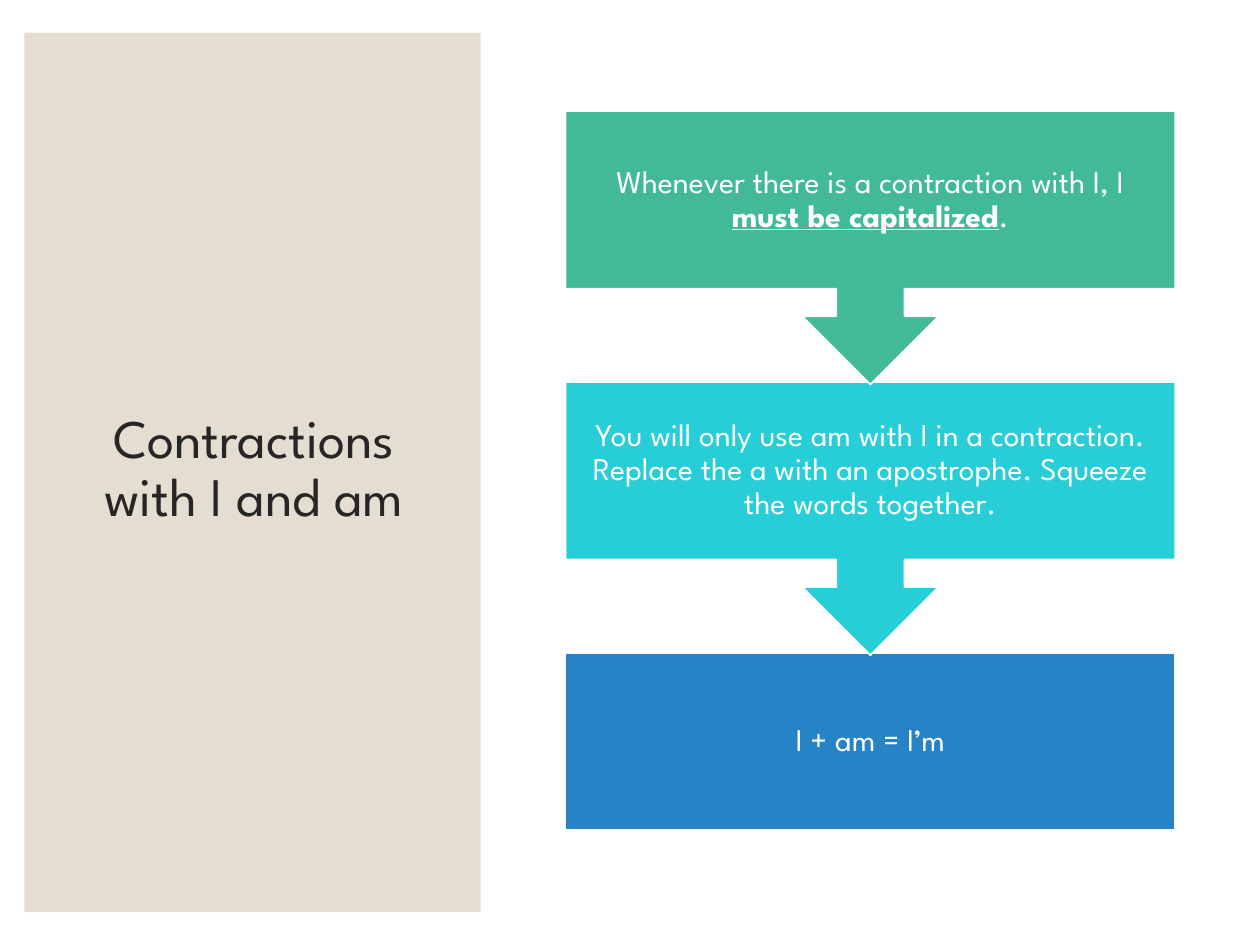
from dataclasses import dataclass

import pptx
import pptx.dml.color
import pptx.enum.shapes
import pptx.enum.text
import pptx.util
from pptx.util import Cm

RGBColor = pptx.dml.color.RGBColor
ShapeKind = pptx.enum.shapes.MSO_SHAPE


@dataclass(frozen=True)
class Theme:
    font: str = "League Spartan"
    title_size: int = 31
    step_size: int = 18
    white: str = "FFFFFF"
    panel: str = "E3DED1"
    title: str = "262626"
    green: str = "42BA97"
    cyan: str = "27CED7"
    blue: str = "2683C6"


@dataclass(frozen=True)
class Box:
    left: float
    top: float
    width: float
    height: float

    def lengths(self) -> tuple:
        return Cm(self.left), Cm(self.top), Cm(self.width), Cm(self.height)


@dataclass(frozen=True)
class Run:
    text: str
    emphasized: bool = False


@dataclass(frozen=True)
class Step:
    color: str
    runs: tuple[Run, ...]


THEME = Theme()
STEPS = (
    Step(THEME.green, (
        Run("Whenever there is a contraction with I, I "),
        Run("must be capitalized", emphasized=True),
        Run("."),
    )),
    Step(THEME.cyan, (
        Run("You will only use am with I in a contraction. "
            "Replace the a with an apostrophe. Squeeze the words together."),
    )),
    Step(THEME.blue, (Run("I + am = I’m"),)),
)

# Step column, in centimetres
STEP_LEFT, STEP_TOP, STEP_WIDTH = 11.4, 2.24, 12.29
STEP_HEIGHT, CALLOUT_HEIGHT, STEP_PITCH = 3.58, 5.51, 5.46


def add_filled(slide, kind, box: Box, color: str, outlined: bool = False):
    shape = slide.shapes.add_shape(kind, *box.lengths())
    shape.shadow.inherit = False
    shape.fill.solid()
    shape.fill.fore_color.rgb = RGBColor.from_string(color)
    if outlined:
        shape.line.color.rgb = RGBColor.from_string(THEME.white)
        shape.line.width = pptx.util.Pt(1)
    else:
        shape.line.fill.background()
    return shape


def add_text(slide, box: Box, runs: tuple[Run, ...], size: int, color: str,
             margins: tuple[float, float]) -> None:
    frame = slide.shapes.add_textbox(*box.lengths()).text_frame
    frame.word_wrap = True
    frame.vertical_anchor = pptx.enum.text.MSO_ANCHOR.MIDDLE
    frame.margin_left = frame.margin_right = Cm(margins[0])
    frame.margin_top = frame.margin_bottom = Cm(margins[1])
    paragraph = frame.paragraphs[0]
    paragraph.alignment = pptx.enum.text.PP_ALIGN.CENTER
    paragraph.line_spacing = 0.9
    paragraph.font.name = THEME.font
    paragraph.font.size = pptx.util.Pt(size)
    paragraph.font.color.rgb = RGBColor.from_string(color)
    for item in runs:
        run = paragraph.add_run()
        run.text = item.text
        if item.emphasized:
            run.font.bold = True
            run.font.underline = True


def add_step(slide, index: int, step: Step) -> None:
    top = STEP_TOP + index * STEP_PITCH
    box = Box(STEP_LEFT, top, STEP_WIDTH, STEP_HEIGHT)
    if index == len(STEPS) - 1:
        add_filled(slide, ShapeKind.RECTANGLE, box, step.color, outlined=True)
    else:
        callout_box = Box(STEP_LEFT, top, STEP_WIDTH, CALLOUT_HEIGHT)
        callout = add_filled(slide, ShapeKind.UP_ARROW_CALLOUT, callout_box,
                             step.color, outlined=True)
        callout.rotation = 180
    add_text(slide, box, step.runs, THEME.step_size, THEME.white, (0.36, 0.36))


def main() -> None:
    presentation = pptx.Presentation()
    presentation.slide_width, presentation.slide_height = Cm(25.4), Cm(19.05)
    slide = presentation.slides.add_slide(presentation.slide_layouts[6])

    # Background and title panel
    add_filled(slide, ShapeKind.RECTANGLE, Box(0, 0, 25.4, 19.05), THEME.white)
    add_filled(slide, ShapeKind.RECTANGLE, Box(0.49, 0.66, 9.2, 17.73), THEME.panel)
    add_text(slide, Box(1.19, 1.55, 7.85, 15.85), (Run("Contractions with I and am"),),
             THEME.title_size, THEME.title, (0.25, 0.13))

    # Steps, last first so that each arrow tip lies over the next box
    for index, step in reversed(list(enumerate(STEPS))):
        add_step(slide, index, step)

    presentation.save("out.pptx")


if __name__ == "__main__":
    main()
